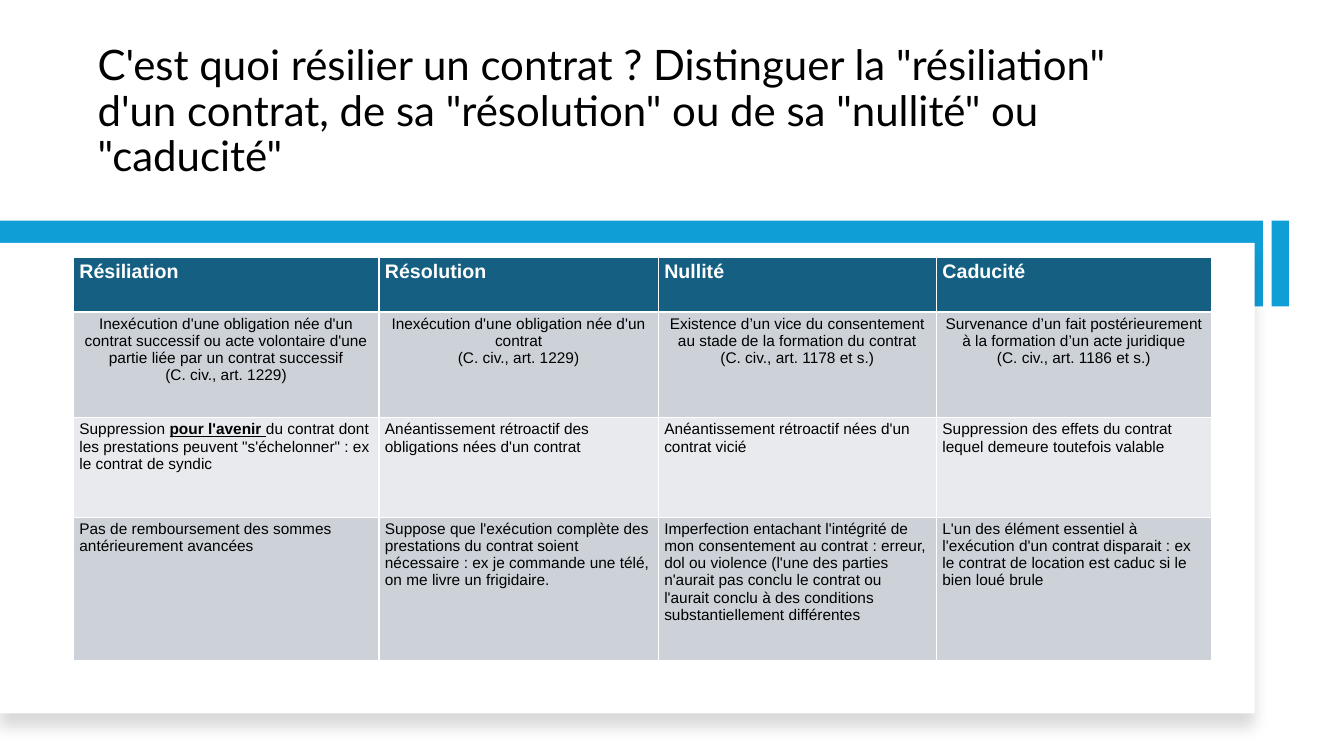
from pptx import Presentation
from pptx.dml.color import RGBColor
from pptx.enum.shapes import MSO_SHAPE
from pptx.enum.text import MSO_ANCHOR, PP_ALIGN
from pptx.oxml import parse_xml
from pptx.oxml.ns import nsdecls
from pptx.util import Cm, Pt

COLORS = {
    "black": "000000", "white": "FFFFFF", "blue": "0F9ED5",
    "head": "156082", "dark": "CCD2D8", "light": "E8EAED",
}

TITLE = ("C'est quoi résilier un contrat ? Distinguer la \"résiliation\" d'un contrat, "
         "de sa \"résolution\" ou de sa \"nullité\" ou \"caducité\"")

# One line per paragraph; stars enclose bold underlined words
ROWS = [
    ["Résiliation", "Résolution", "Nullité", "Caducité"],
    ["Inexécution d'une obligation née d'un contrat successif ou acte volontaire "
     "d'une partie liée par un contrat successif\n(C. civ., art. 1229)",
     "Inexécution d'une obligation née d'un contrat\n(C. civ., art. 1229)",
     "Existence d’un vice du consentement au stade de la formation du contrat\n"
     "(C. civ., art. 1178 et s.)",
     "Survenance d’un fait postérieurement à la formation d’un acte juridique\n"
     "(C. civ., art. 1186 et s.)"],
    ["Suppression *pour l'avenir *du contrat dont les prestations peuvent "
     "\"s'échelonner\" : ex le contrat de syndic",
     "Anéantissement rétroactif des obligations nées d'un contrat",
     "Anéantissement rétroactif nées d'un contrat vicié",
     "Suppression des effets du contrat lequel demeure toutefois valable"],
    ["Pas de remboursement des sommes antérieurement avancées",
     "Suppose que l'exécution complète des prestations du contrat soient nécessaire : "
     "ex je commande une télé, on me livre un frigidaire.",
     "Imperfection entachant l'intégrité de mon consentement au contrat : erreur, dol "
     "ou violence (l'une des parties n'aurait pas conclu le contrat ou l'aurait conclu "
     "à des conditions substantiellement différentes",
     "L'un des élément essentiel à l'exécution d'un contrat disparait : ex le contrat "
     "de location est caduc si le bien loué brule"],
]
WIDTHS = [7.7, 7.04, 7.01, 6.93]
HEIGHTS = [1.37, 2.67, 2.51, 3.61]
# Fill, text colour, size, bold and alignment of each row
LOOKS = [
    ("head", "white", 14, True, PP_ALIGN.LEFT),
    ("dark", "black", 11, False, PP_ALIGN.CENTER),
    ("light", "black", 11, False, PP_ALIGN.LEFT),
    ("dark", "black", 11, False, PP_ALIGN.LEFT),
]


def color(name):
    return RGBColor.from_string(COLORS[name])


class Page:
    def __init__(self, slide):
        self.shapes = slide.shapes

    def font(self, para, face, size, tint, bold=False):
        para.font.name = face
        para.font.size = Pt(size)
        para.font.bold = bold
        para.font.color.rgb = color(tint)

    def title(self, text, *area):
        frame = self.shapes.add_textbox(*map(Cm, area)).text_frame
        frame.word_wrap = True
        frame.vertical_anchor = MSO_ANCHOR.BOTTOM
        para = frame.paragraphs[0]
        para.text = text
        para.line_spacing = 0.9
        self.font(para, "Lato", 30, "black")

    def box(self, fill, *area):
        shape = self.shapes.add_shape(MSO_SHAPE.RECTANGLE, *map(Cm, area))
        shape.shadow.inherit = False
        shape.fill.solid()
        shape.fill.fore_color.rgb = color(fill)
        shape.line.fill.background()
        return shape

    def panel(self, fill, *area):
        props = self.box(fill, *area)._element.spPr
        props.remove(props.find("{*}effectLst"))
        props.append(parse_xml(
            f'<a:effectLst {nsdecls("a")}><a:outerShdw blurRad="{Pt(11)}" dist="{Pt(10)}" '
            f'dir="5400000" algn="t" rotWithShape="0"><a:srgbClr val="{COLORS["black"]}">'
            '<a:alpha val="15000"/></a:srgbClr></a:outerShdw></a:effectLst>'))

    def cell(self, cell, text, look):
        fill, tint, size, bold, align = look
        cell.fill.solid()
        cell.fill.fore_color.rgb = color(fill)
        cell.margin_left = cell.margin_right = Cm(0.15)
        cell.margin_top = cell.margin_bottom = Cm(0.08)
        frame = cell.text_frame
        for i, line in enumerate(text.split("\n")):
            para = frame.add_paragraph() if i else frame.paragraphs[0]
            para.alignment = align
            self.font(para, "Arial", size, tint, bold)
            for j, part in enumerate(line.split("*")):
                run = para.add_run()
                run.text = part
                if j % 2:
                    run.font.bold = run.font.underline = True

    def table(self, left, top):
        area = (left, top, sum(WIDTHS), sum(HEIGHTS))
        grid = self.shapes.add_table(len(ROWS), len(WIDTHS), *map(Cm, area)).table
        for col, width in zip(grid.columns, WIDTHS):
            col.width = Cm(width)
        for r, (texts, look) in enumerate(zip(ROWS, LOOKS)):
            grid.rows[r].height = Cm(HEIGHTS[r])
            for c, text in enumerate(texts):
                self.cell(grid.cell(r, c), text, look)


def main():
    deck = Presentation()
    deck.slide_width, deck.slide_height = Cm(33.87), Cm(19.05)
    page = Page(deck.slides.add_slide(deck.slide_layouts[6]))

    # Heading
    page.title(TITLE, 2.21, 1.07, 27.97, 3.61)

    # Blue band, white panel over it, and side bar
    page.box("blue", 0, 5.56, 31.83, 2.16)
    page.panel("white", 0, 6.12, 31.62, 11.86)
    page.box("blue", 32.05, 5.56, 0.43, 2.16)

    # Comparison of the four notions
    page.table(1.85, 6.49)

    deck.save("out.pptx")


if __name__ == "__main__":
    main()
